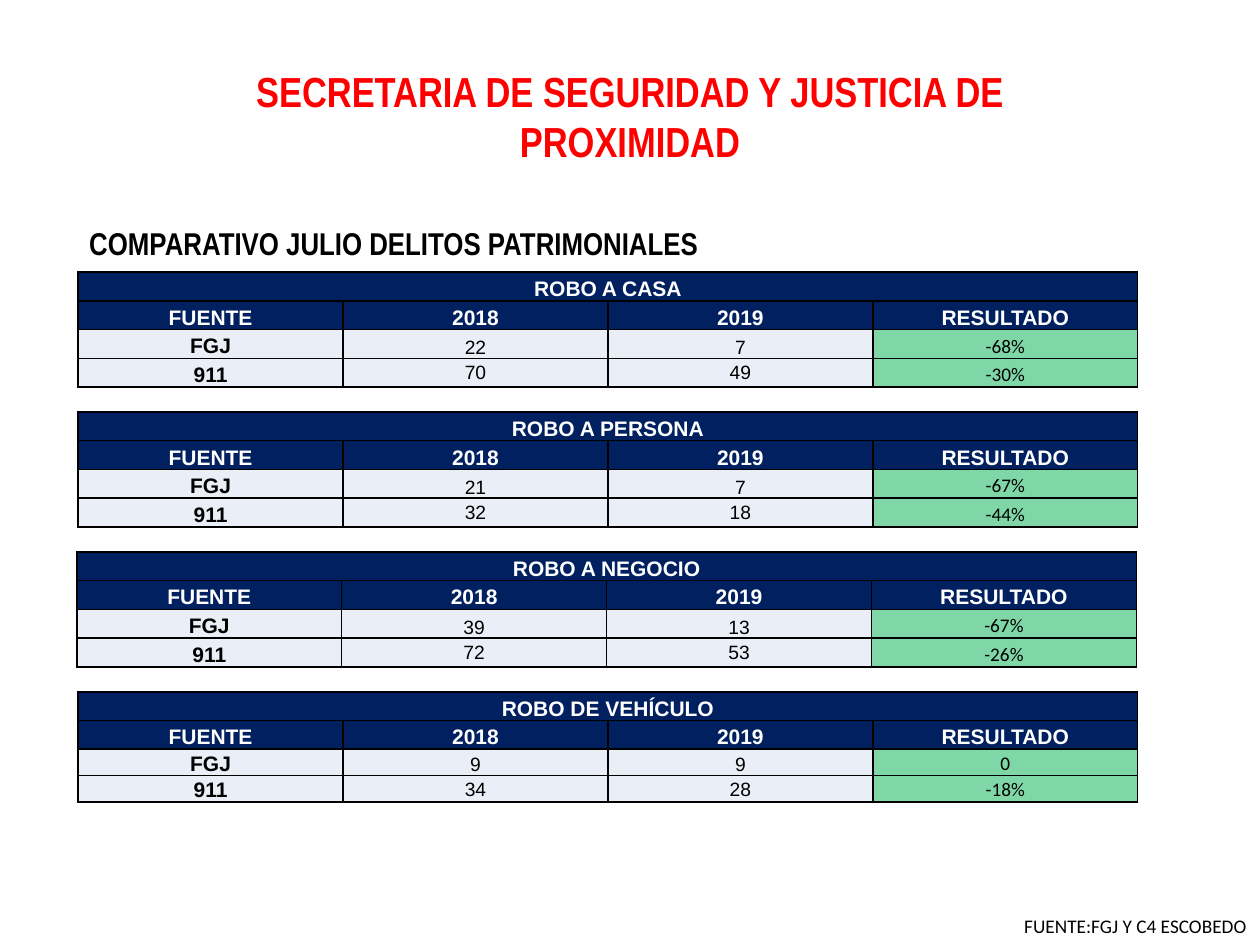
from dataclasses import dataclass

from lxml.etree import SubElement
from pptx import Presentation
from pptx.dml.color import RGBColor
from pptx.enum.text import MSO_ANCHOR as Anchor, MSO_AUTO_SIZE as AutoSize, PP_ALIGN as Align
from pptx.oxml import parse_xml
from pptx.oxml.ns import nsdecls, qn
from pptx.util import Inches, Pt

SLIDE_WIDTH, SLIDE_HEIGHT = Inches(10), Inches(7.5)
COLUMN, ROW = SLIDE_WIDTH / 100, SLIDE_HEIGHT / 75


@dataclass(frozen=True)
class Theme:
    """Colours, fonts and type sizes of the slide."""
    red: str = "FF0000"
    black: str = "000000"
    white: str = "FFFFFF"
    navy: str = "002060"
    pale: str = "EAEFF7"
    green: str = "00B050"
    heading_font: str = "Arial Narrow"
    table_font: str = "Arial"
    body_font: str = "Calibri"
    title_size: int = 24
    subtitle_size: int = 18
    label_size: int = 12
    value_size: int = 11


@dataclass(frozen=True)
class Box:
    """A rectangle measured in grid columns and rows."""
    left: float
    top: float
    width: float
    height: float

    def lengths(self):
        """Return left, top, width and height as slide lengths."""
        return (int(self.left * COLUMN), int(self.top * ROW),
                int(self.width * COLUMN), int(self.height * ROW))


THEME = Theme()
HEADER = ["FUENTE", "2018", "2019", "RESULTADO"]
CRIMES = [
    ("ROBO A CASA", ["FGJ", "22", "7", "-68%"], ["911", "70", "49", "-30%"]),
    ("ROBO A PERSONA", ["FGJ", "21", "7", "-67%"], ["911", "32", "18", "-44%"]),
    ("ROBO A NEGOCIO", ["FGJ", "39", "13", "-67%"], ["911", "72", "53", "-26%"]),
    ("ROBO DE VEHÍCULO", ["FGJ", "9", "9", "0"], ["911", "34", "28", "-18%"]),
]
TABLE_LEFTS = [6.2, 6.2, 6.1, 6.2]
DATA_ROW_HEIGHTS = [2.28, 2.28, 2.28, 2.1]
HEADER_ROW_HEIGHT = 2.28
TABLE_TOP, TABLE_STEP, TABLE_WIDTH = 21.6, 11.1, 84.1


def write_text(frame, text, *, font, size, color=THEME.black, bold=False,
               align=Align.LEFT, anchor=Anchor.TOP, wrap=True):
    """Write one formatted paragraph into a text frame."""
    frame.word_wrap = wrap
    frame.vertical_anchor = anchor
    paragraph = frame.paragraphs[0]
    paragraph.alignment = align
    run = paragraph.add_run()
    run.text = text
    run.font.name, run.font.size, run.font.bold = font, Pt(size), bold
    run.font.color.rgb = RGBColor.from_string(color)


def style_cell(cell, fill, opacity=100):
    """Give a cell its fill, thin margins and black borders."""
    cell.margin_left = cell.margin_right = cell.margin_top = Inches(0.01)
    cell.margin_bottom = 0
    cell.fill.solid()
    cell.fill.fore_color.rgb = RGBColor.from_string(fill)
    properties = cell._tc.get_or_add_tcPr()
    if opacity < 100:
        color = properties.find(f".//{qn('a:srgbClr')}")
        SubElement(color, qn("a:alpha"), val=str(opacity * 1000))
    for index, side in enumerate(("lnL", "lnR", "lnT", "lnB")):
        properties.insert(index, parse_xml(
            f'<a:{side} {nsdecls("a")} w="{Pt(1)}"><a:solidFill>'
            f'<a:srgbClr val="{THEME.black}"/></a:solidFill></a:{side}>'))


def write_cell(cell, text, anchor=Anchor.BOTTOM, **text_format):
    """Write centred text into a table cell."""
    write_text(cell.text_frame, text, align=Align.CENTER, **text_format)
    cell.vertical_anchor = anchor


def add_title(slide, box):
    """Place and format the slide title."""
    title = slide.shapes.title
    title.left, title.top, title.width, title.height = box.lengths()
    write_text(title.text_frame, "SECRETARIA DE SEGURIDAD Y JUSTICIA DE PROXIMIDAD",
               font=THEME.heading_font, size=THEME.title_size, color=THEME.red,
               bold=True, align=Align.CENTER)
    title.text_frame.auto_size = AutoSize.NONE


def add_label(slide, box, text, **text_format):
    """Add a text box holding one line."""
    frame = slide.shapes.add_textbox(*box.lengths()).text_frame
    write_text(frame, text, **text_format)


def add_crime_table(slide, box, crime, data_row_height):
    """Add the comparison of one crime by source and year."""
    name, *records = crime
    table = slide.shapes.add_table(4, len(HEADER), *box.lengths()).table
    heights = [HEADER_ROW_HEIGHT] * 2 + [data_row_height] * 2
    for row, height in zip(table.rows, heights):
        row.height = int(height * ROW)
    label = dict(font=THEME.table_font, size=THEME.label_size, bold=True)
    for row_index, texts in enumerate([[name], HEADER, *records]):
        is_heading = row_index < 2
        for column_index in range(len(HEADER)):
            is_result = not is_heading and column_index == 3
            fill = THEME.navy if is_heading else THEME.green if is_result else THEME.pale
            style_cell(table.cell(row_index, column_index), fill, 50 if is_result else 100)
        for column_index, text in enumerate(texts):
            cell = table.cell(row_index, column_index)
            if is_heading:
                write_cell(cell, text, color=THEME.white, **label)
            elif column_index == 0:
                write_cell(cell, text, **label)
            else:
                is_result = column_index == 3
                is_middle = row_index == 3 and not is_result
                write_cell(cell, text, size=THEME.value_size,
                           font=THEME.body_font if is_result else THEME.table_font,
                           anchor=Anchor.MIDDLE if is_middle else Anchor.BOTTOM)
    table.cell(0, 0).merge(table.cell(0, len(HEADER) - 1))


def add_comparison_slide(presentation):
    """Add the slide comparing property crimes between two years."""
    slide = presentation.slides.add_slide(presentation.slide_layouts[5])
    add_title(slide, Box(19, 4.7, 62, 9.1))
    add_label(slide, Box(6.1, 17.3, 73.8, 4), "COMPARATIVO JULIO DELITOS PATRIMONIALES",
              font=THEME.heading_font, size=THEME.subtitle_size, bold=True)
    for index, (crime, left, height) in enumerate(
            zip(CRIMES, TABLE_LEFTS, DATA_ROW_HEIGHTS)):
        box = Box(left, TABLE_TOP + index * TABLE_STEP, TABLE_WIDTH,
                  2 * (HEADER_ROW_HEIGHT + height))
        add_crime_table(slide, box, crime, height)
    add_label(slide, Box(80.3, 72.1, 19.8, 2.9), "FUENTE:FGJ Y C4 ESCOBEDO",
              font=THEME.body_font, size=THEME.value_size, wrap=False)


def main():
    """Build and save the presentation."""
    presentation = Presentation()
    presentation.slide_width, presentation.slide_height = SLIDE_WIDTH, SLIDE_HEIGHT
    add_comparison_slide(presentation)
    presentation.save("out.pptx")


if __name__ == "__main__":
    main()
